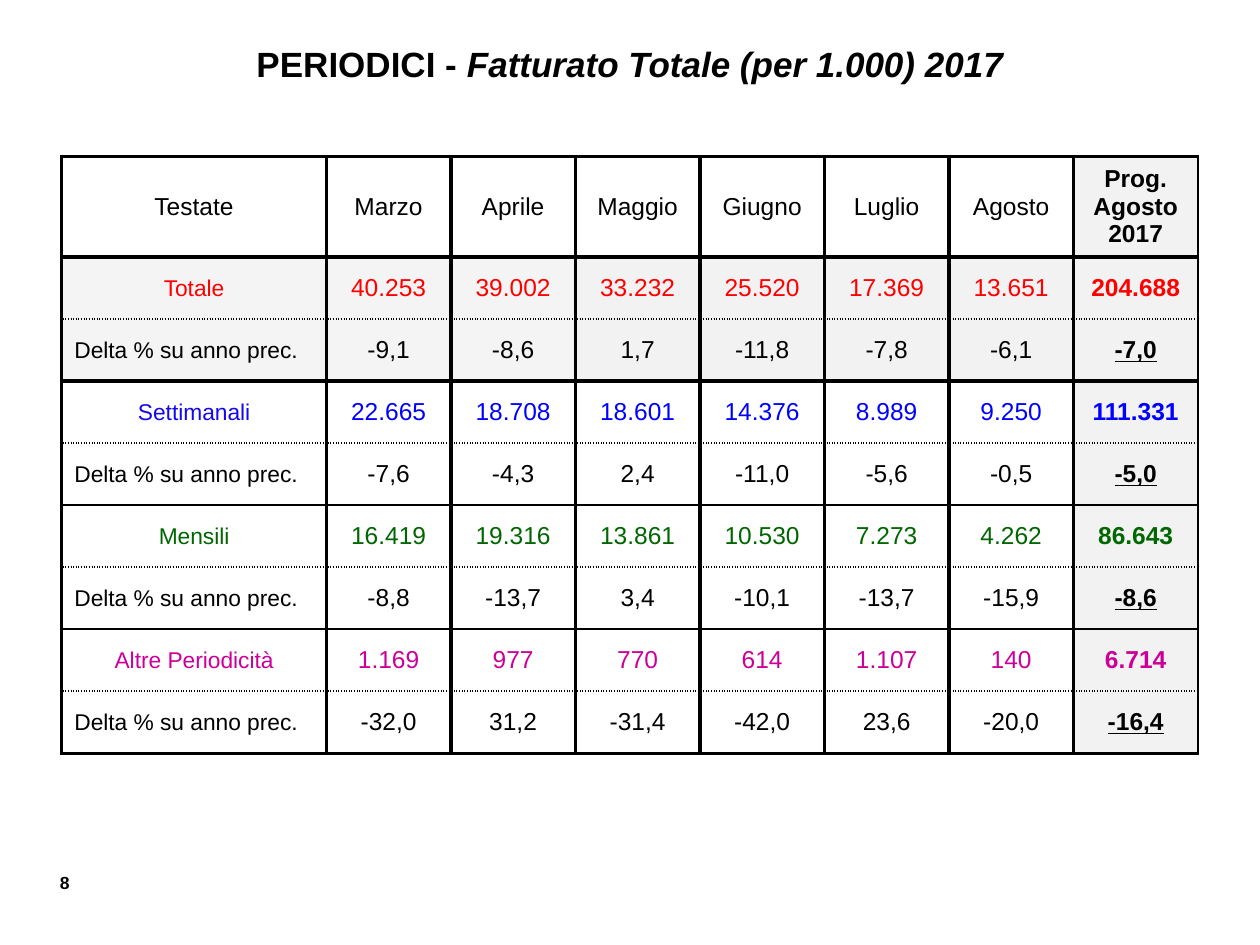
from lxml.etree import SubElement
from pptx import Presentation
from pptx.dml.color import RGBColor
from pptx.enum.text import MSO_ANCHOR as Anchor, PP_ALIGN as Align
from pptx.oxml.ns import qn
from pptx.util import Inches, Pt

BLACK, GREY = "000000", "F2F2F2"
HEADINGS = ["Testate", "Marzo", "Aprile", "Maggio", "Giugno", "Luglio", "Agosto",
            "Prog.\vAgosto 2017"]
DELTA = "Delta % su anno prec."
GROUPS = [
    ("Totale", "FF0000", "FF0000",
     ["40.253", "39.002", "33.232", "25.520", "17.369", "13.651", "204.688"],
     ["-9,1", "-8,6", "1,7", "-11,8", "-7,8", "-6,1", "-7,0"]),
    ("Settimanali", "1409ED", "0000FF",
     ["22.665", "18.708", "18.601", "14.376", "8.989", "9.250", "111.331"],
     ["-7,6", "-4,3", "2,4", "-11,0", "-5,6", "-0,5", "-5,0"]),
    ("Mensili", "006600", "006600",
     ["16.419", "19.316", "13.861", "10.530", "7.273", "4.262", "86.643"],
     ["-8,8", "-13,7", "3,4", "-10,1", "-13,7", "-15,9", "-8,6"]),
    ("Altre Periodicità", "CC0099", "CC0099",
     ["1.169", "977", "770", "614", "1.107", "140", "6.714"],
     ["-32,0", "31,2", "-31,4", "-42,0", "23,6", "-20,0", "-16,4"]),
]
TITLE = [("PERIODICI - ", {}), ("Fatturato Totale (per 1.000) 2017", {"italic": True})]

SLIDE_W, SLIDE_H = 10, 7.5
LEFT, TOP, WIDTH, HEIGHT = 0.49, 1.24, 9.02, 4.74
LABEL_W, HEAD_H = 2.1, 0.8
THICK, MEDIUM, THIN, DOTTED = (2.25, "solid"), (1.5, "solid"), (1, "solid"), (1, "sysDot")
RULES = [THICK, THICK, DOTTED, THICK, DOTTED, MEDIUM, DOTTED, MEDIUM, DOTTED, THICK]


def rgb(value):
    return RGBColor.from_string(value)


def style(run, color=BLACK, **formats):
    run.font.color.rgb = rgb(color)
    for name, value in {"name": "Arial", **formats}.items():
        setattr(run.font, name, value)


def add_text(slide, box, align, runs, **formats):
    frame = slide.shapes.add_textbox(*map(Inches, box)).text_frame
    frame.word_wrap = True
    line = frame.paragraphs[0]
    line.alignment = align
    for words, extra in runs:
        run = line.add_run()
        run.text = words
        style(run, **formats, **extra)


def add_border(cell, side, rule):
    width, dash = rule
    border = SubElement(cell._tc.get_or_add_tcPr(), qn(f"a:ln{side}"), w=str(Pt(width)))
    SubElement(SubElement(border, qn("a:solidFill")), qn("a:srgbClr"), val=BLACK)
    SubElement(border, qn("a:prstDash"), val=dash)


def fill_cell(cell, row, col, last):
    if col != last and row not in (1, 2):
        cell.fill.background()
        return
    cell.fill.solid()
    cell.fill.fore_color.rgb = rgb(GREY)
    if col < 3:
        grey = cell._tc.tcPr.find(f".//{qn('a:solidFill')}[last()]/{qn('a:srgbClr')}[@val='{GREY}']")
        SubElement(grey, qn("a:alpha"), val="80000")


def add_figures(slide):
    rows = [[(words, BLACK) for words in HEADINGS]]
    for label, label_color, color, amounts, deltas in GROUPS:
        rows.append([(label, label_color)] + [(amount, color) for amount in amounts])
        rows.append([(words, BLACK) for words in [DELTA] + deltas])

    last = len(HEADINGS) - 1
    box = map(Inches, (LEFT, TOP, WIDTH, HEIGHT))
    table = slide.shapes.add_table(len(rows), len(HEADINGS), *box).table
    table.first_row = table.horz_banding = False
    for col, column in enumerate(table.columns):
        column.width = Inches((WIDTH - LABEL_W) / last if col else LABEL_W)
    for row, band in enumerate(table.rows):
        band.height = Inches((HEIGHT - HEAD_H) / (len(rows) - 1) if row else HEAD_H)

    for row, entries in enumerate(rows):
        is_delta = row > 0 and row % 2 == 0
        for col, (words, color) in enumerate(entries):
            cell = table.cell(row, col)
            cell.vertical_anchor = Anchor.MIDDLE
            if row and col:
                for side in ("left", "right", "top", "bottom"):
                    setattr(cell, f"margin_{side}", 0)
            line = cell.text_frame.paragraphs[0]
            line.text = words
            line.alignment = Align.LEFT if is_delta and col == 0 else Align.CENTER
            for run in line.runs:
                style(run, color, size=Pt(13 if row and col == 0 else 14),
                      bold=col == last, underline=is_delta and col == last)
            right = THIN if col == last else THICK
            for side, rule in zip("LRTB", (THICK, right, RULES[row], RULES[row + 1])):
                add_border(cell, side, rule)
            fill_cell(cell, row, col, last)


def main():
    deck = Presentation()
    deck.slide_width, deck.slide_height = Inches(SLIDE_W), Inches(SLIDE_H)
    slide = deck.slides.add_slide(deck.slide_layouts[6])
    add_text(slide, (0.19, 6.87, 0.46, 0.27), Align.RIGHT, [("8", {})], size=Pt(10), bold=True)
    add_figures(slide)
    add_text(slide, (0, 0.29, SLIDE_W, 0.44), Align.CENTER, TITLE, size=Pt(20), bold=True)
    deck.save("out.pptx")


if __name__ == "__main__":
    main()
